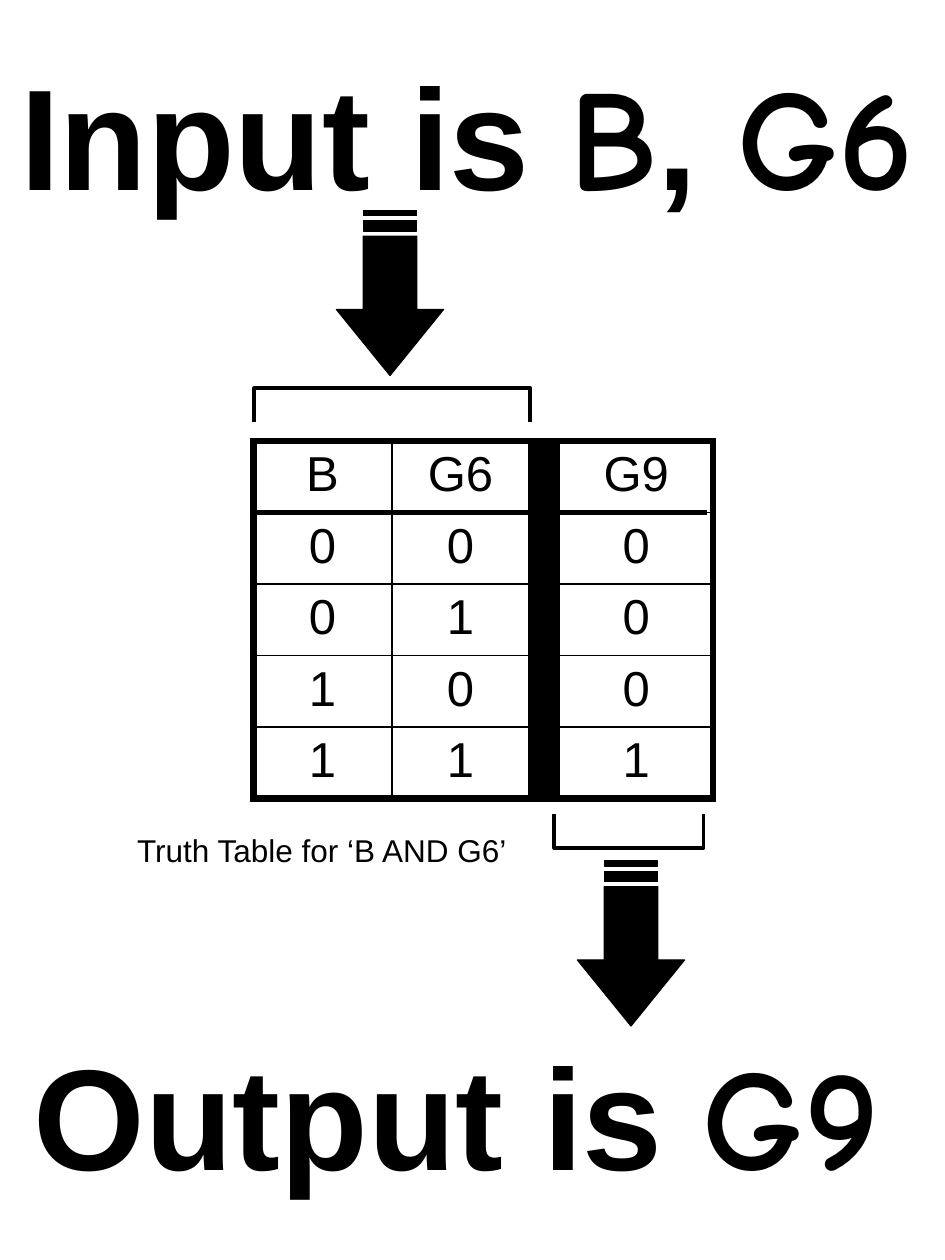
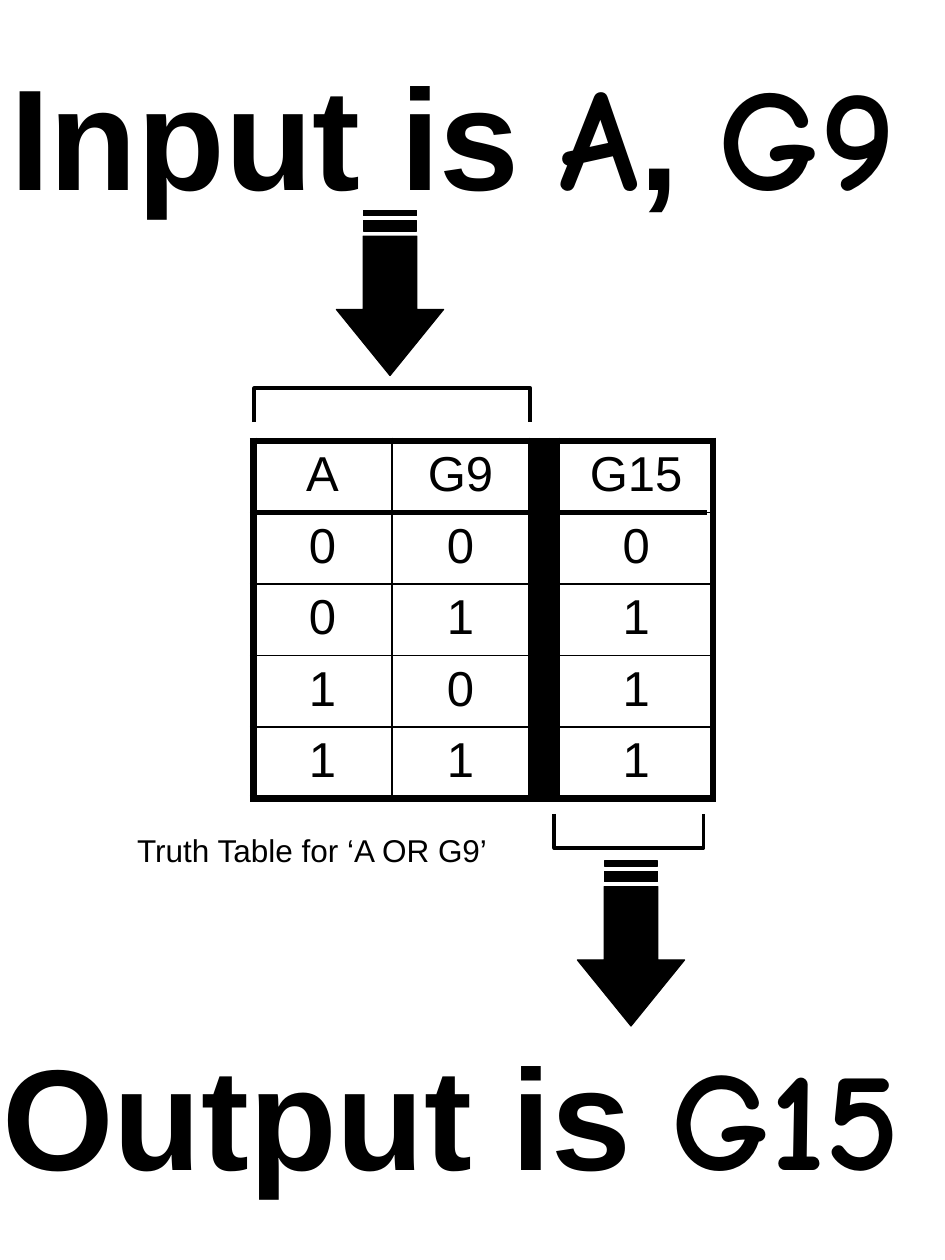
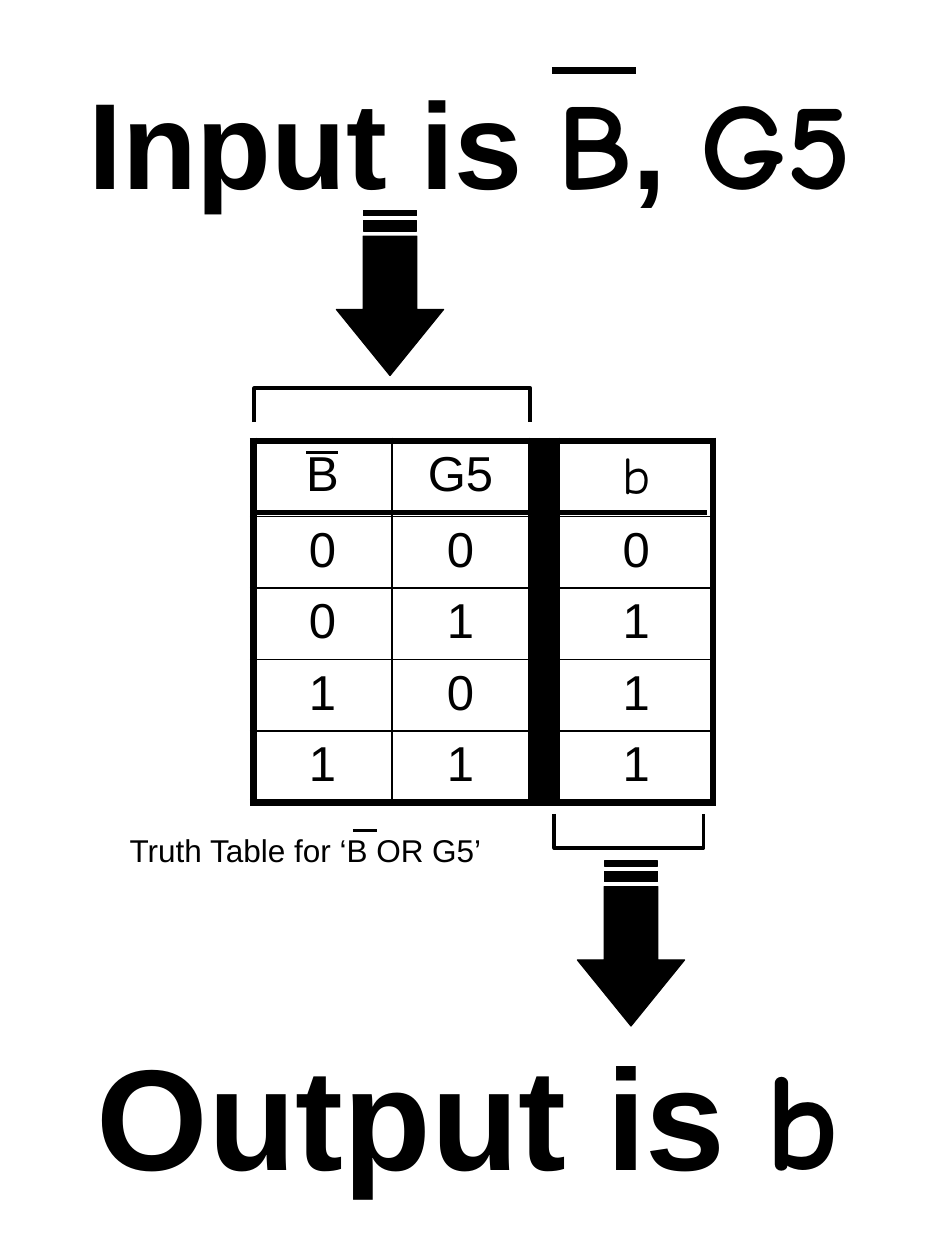
from dataclasses import dataclass

from lxml.etree import SubElement
from pptx import Presentation
from pptx.dml.color import RGBColor
from pptx.enum.shapes import MSO_CONNECTOR as Connector
from pptx.enum.text import MSO_ANCHOR as Anchor, MSO_AUTO_SIZE as AutoSize, PP_ALIGN as Align
from pptx.oxml.ns import qn
from pptx.util import Pt


@dataclass(frozen=True)
class Theme:
    ink: RGBColor = RGBColor(0, 0, 0)
    plain: str = "Arial"
    script: str = "Comic Neue"
    heading: float = 82
    cell: float = 28
    caption: float = 18
    thin: float = 1
    thick: float = 4.5


THEME = Theme()
TABLE_LEFT, TABLE_TOP = 144.7, 252
COLUMN_WIDTHS = (79.2, 78.5, 16.6, 87.8)
GAP_COLUMN = 2

# Boxes are left, top, width, height. Overbars are left, right, y, weight.
SLIDES = [
    dict(
        inputs=("B", "G6"), output="G9", operator="AND", results="0001",
        row_heights=[40.8] * 5,
        title_box=(4.3, 23, 532, 105.8), caption_box=(71.3, 471.6, 229.7, 28.8),
        output_box=(12.2, 583.2, 502.6, 105.8), output_size=82,
    ),
    dict(
        inputs=("A", "G9"), output="G15", operator="OR", results="0111",
        row_heights=[38.5] * 5,
        title_box=(-1.4, 23, 540, 105.8), caption_box=(71.3, 471.6, 218.2, 28.8),
        output_box=(-5.8, 583.2, 549.4, 105.8),
    ),
    dict(
        inputs=("B", "G5"), output="b", operator="OR", results="0111",
        row_heights=[41.7] + [38.5] * 4, title_size=70,
        output_cell=dict(font=THEME.script, size=30),
        title_box=(43.2, 34.6, 456.5, 91.4), caption_box=(67, 471.6, 218.2, 28.8),
        output_box=(48.2, 583.2, 444.2, 105.8),
        overbars=[(315.4, 363.6, 40.3, 4.5), (175, 193, 258.5, 1.5),
                  (201.6, 215.3, 474.5, 1.5)],
    ),
]


def write_text(frame, *pieces, font=THEME.plain, size=THEME.cell, bold=False, align=Align.LEFT):
    """Write one paragraph; a piece is a string or (string, font, size)."""
    paragraph = frame.paragraphs[0]
    paragraph.alignment = align
    for piece in pieces:
        text, face, points = (piece, font, size) if isinstance(piece, str) else piece
        run = paragraph.add_run()
        run.text = text
        run.font.name = face
        run.font.size = Pt(points)
        run.font.bold = bold
        run.font.color.rgb = THEME.ink


def fill_text_shape(shape, box, *pieces, **text_format):
    shape.left, shape.top, shape.width, shape.height = map(Pt, box)
    frame = shape.text_frame
    frame.word_wrap = False
    frame.auto_size = AutoSize.SHAPE_TO_FIT_TEXT
    frame.vertical_anchor = Anchor.TOP
    write_text(frame, *pieces, **text_format)


def add_text(slide, box, *pieces, **text_format):
    shape = slide.shapes.add_textbox(*map(Pt, box))
    fill_text_shape(shape, box, *pieces, **text_format)


def add_rule(slide, left, right, y, weight):
    rule = slide.shapes.add_connector(Connector.STRAIGHT, Pt(left), Pt(y), Pt(right), Pt(y))
    rule.line.color.rgb = THEME.ink
    rule.line.width = Pt(weight)
    SubElement(rule._element.spPr, qn("a:effectLst"))


def add_outline(slide, contours, weight, closed):
    """Draw one freeform from contours of points; closed ones are filled."""
    contours = [[(Pt(x), Pt(y)) for x, y in contour] for contour in contours]
    builder = slide.shapes.build_freeform(*contours[0][0])
    for contour in contours:
        if contour is not contours[0]:
            builder.move_to(*contour[0])
        builder.add_line_segments(contour[1:], close=closed)
    shape = builder.convert_to_shape()
    shape.shadow.inherit = False
    shape.line.color.rgb = THEME.ink
    shape.line.width = Pt(weight)
    if closed:
        shape.fill.solid()
        shape.fill.fore_color.rgb = THEME.ink
    else:
        shape.fill.background()
    return shape


def add_striped_arrow(slide, left, top, length=94.3, breadth=61.2):
    """Draw a right arrow with two tail stripes, turned to point down."""
    def place(*points):
        return [(left + x * length, top + y * breadth) for x, y in points]

    def stripe(start, end):
        return place((start, 0.25), (end, 0.25), (end, 0.75), (start, 0.75))

    body, neck = 5 / 32, 0.6
    arrow = place((neck, 0), (neck, 0.25), (body, 0.25), (body, 0.75),
                  (neck, 0.75), (neck, 1), (1, 0.5))
    shape = add_outline(slide, [arrow, stripe(1 / 16, 1 / 8), stripe(0, 1 / 32)],
                        weight=0.75, closed=True)
    shape.rotation = 90


def add_bracket(slide, left, width, open_y, closed_y):
    right = left + width
    points = [(left, open_y), (left, closed_y), (right, closed_y), (right, open_y)]
    add_outline(slide, [points], weight=2.25, closed=False)


def set_borders(cell, **weights):
    properties = cell._tc.get_or_add_tcPr()
    for side in "LRTB":
        line = SubElement(properties, qn(f"a:ln{side}"), w=str(Pt(weights[side])))
        fill = SubElement(line, qn("a:solidFill"))
        SubElement(fill, qn("a:srgbClr"), val=str(THEME.ink))


def add_truth_table(slide, inputs, output, results, row_heights, output_cell):
    rows = [(*inputs, "", output)]
    rows += [(*f"{number:02b}", "", result) for number, result in enumerate(results)]
    last_row, last_column = len(rows) - 1, len(COLUMN_WIDTHS) - 1
    table = slide.shapes.add_table(
        len(rows), len(COLUMN_WIDTHS), Pt(TABLE_LEFT), Pt(TABLE_TOP),
        Pt(sum(COLUMN_WIDTHS)), Pt(sum(row_heights))).table
    table.first_row = table.horz_banding = False
    for column, width in zip(table.columns, COLUMN_WIDTHS):
        column.width = Pt(width)

    def weight(is_outer):
        return THEME.thick if is_outer else THEME.thin

    for row, values in enumerate(rows):
        table.rows[row].height = Pt(row_heights[row])
        for column, value in enumerate(values):
            cell = table.cell(row, column)
            set_borders(cell, L=weight(column == 0), R=weight(column == last_column),
                        T=weight(row == 0), B=weight(row == last_row))
            if column == GAP_COLUMN:
                cell.fill.solid()
                cell.fill.fore_color.rgb = THEME.ink
                continue
            cell.fill.background()
            is_output_name = row == 0 and column == last_column
            write_text(cell.text_frame, value, align=Align.CENTER,
                       **(output_cell if is_output_name else {}))


def add_gate_slide(presentation, inputs, output, operator, results, row_heights,
                   title_box, caption_box, output_box, title_size=THEME.heading,
                   output_size=80, output_cell=None, overbars=()):
    slide = presentation.slides.add_slide(presentation.slide_layouts[5])
    first, second = inputs
    fill_text_shape(slide.shapes.title, title_box, "Input is ",
                    (first, THEME.script, title_size), ", ",
                    (second, THEME.script, title_size), size=title_size, bold=True)
    add_truth_table(slide, inputs, output, results, row_heights, output_cell or {})
    add_text(slide, caption_box, f"Truth Table for ‘{first} {operator} {second}’",
             size=THEME.caption)
    add_rule(slide, TABLE_LEFT, 403.9, 293, 3)
    add_striped_arrow(slide, 175.7, 136.8)
    add_bracket(slide, 145.4, 157.7, open_y=241.2, closed_y=221.8)
    add_striped_arrow(slide, 313.4, 508.5)
    add_bracket(slide, 316.8, 85.2, open_y=465.1, closed_y=484.6)
    add_text(slide, output_box, "Output is ", (output, THEME.script, output_size),
             size=THEME.heading, bold=True)
    for overbar in overbars:
        add_rule(slide, *overbar)


def main():
    presentation = Presentation()
    presentation.slide_width, presentation.slide_height = Pt(540), Pt(720)
    for content in SLIDES:
        add_gate_slide(presentation, **content)
    presentation.save("out.pptx")


if __name__ == "__main__":
    main()
